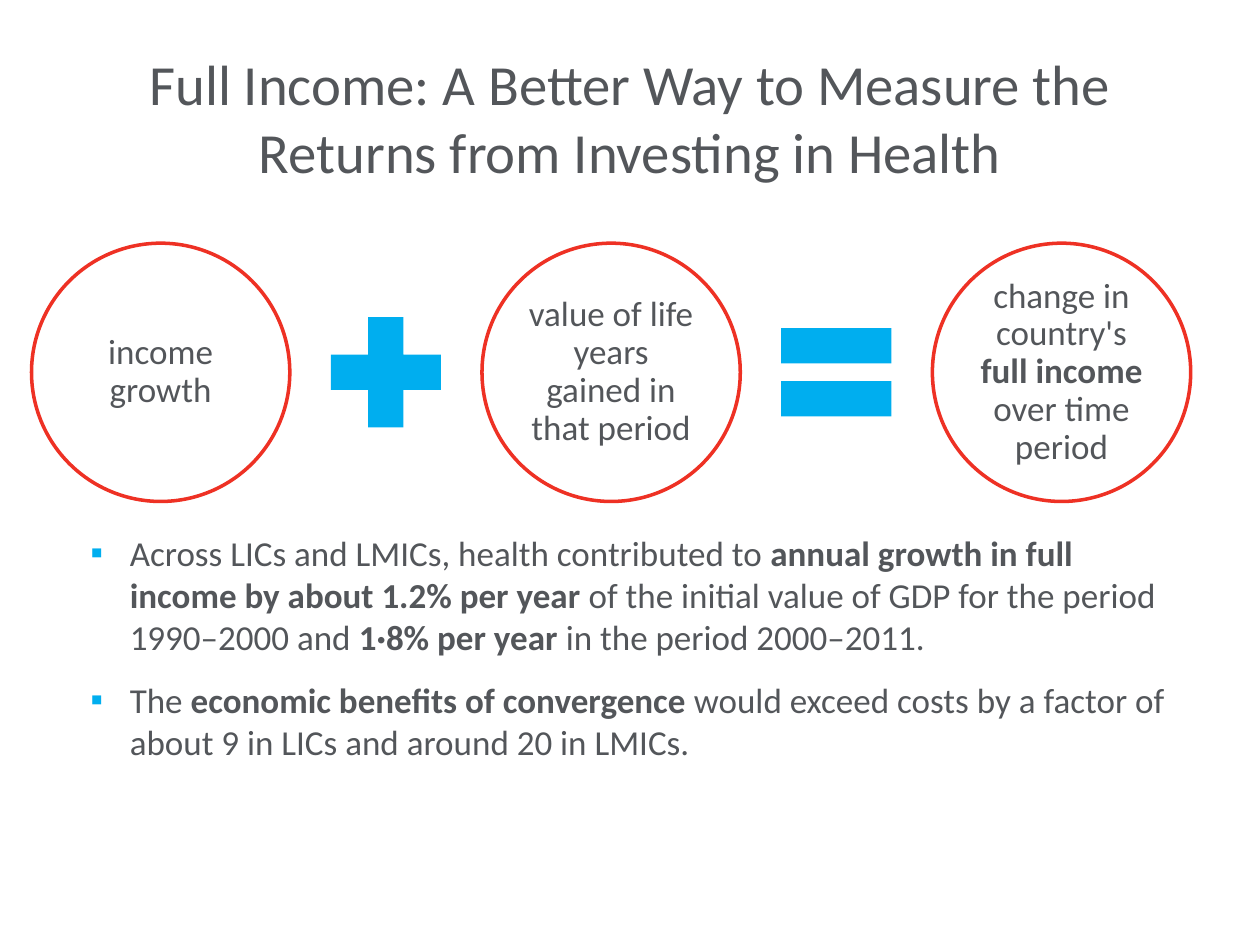
from dataclasses import dataclass

import pptx
import pptx.dml.color
import pptx.enum.shapes
import pptx.enum.text
import pptx.oxml
import pptx.oxml.ns
import pptx.util
from pptx.util import Inches

SHAPE = pptx.enum.shapes.MSO_SHAPE
ALIGN = pptx.enum.text.PP_ALIGN
ANCHOR = pptx.enum.text.MSO_ANCHOR
AUTO = pptx.enum.text.MSO_AUTO_SIZE


@dataclass(frozen=True)
class Theme:
    """Colours, font and type sizes of the slide."""
    font: str = "Calibri"
    text: str = "53565A"
    accent: str = "00AEEF"
    ring: str = "EE3124"
    paper: str = "FFFFFF"
    title_size: float = 32.4
    body_size: float = 20


THEME = Theme()
TITLE = "Full Income: A Better Way to Measure the Returns from Investing in Health"
EQUATION = [
    (SHAPE.OVAL, [("income growth", False)]),
    (SHAPE.MATH_PLUS, None),
    (SHAPE.OVAL, [("value of life years gained in that period", False)]),
    (SHAPE.MATH_EQUAL, None),
    (SHAPE.OVAL, [("change in country's ", False), ("full income ", True),
                  ("over time period", False)]),
]
FINDINGS = [
    [("Across LICs and LMICs, health contributed to ", False),
     ("annual growth in full income by about 1.2% per year ", True),
     ("of the initial value of GDP for the period 1990–2000 and ", False),
     ("1·8% per year ", True),
     ("in the period 2000–2011.", False)],
    [("The", False), (" economic benefits of convergence ", True),
     ("would exceed costs by a factor of about 9 in LICs and around 20 in LMICs.", False)],
]


def rgb(value):
    """Return a colour from its hex value."""
    return pptx.dml.color.RGBColor.from_string(value)


def write(p, runs, size=THEME.body_size, align=ALIGN.LEFT, spacing=1.0, after=0):
    """Fill a paragraph with (text, bold) runs in the given format."""
    p.alignment = align
    p.line_spacing = spacing
    p.space_before = pptx.util.Pt(0)
    p.space_after = pptx.util.Pt(after)
    for text, bold in runs:
        r = p.add_run()
        r.text = text
        r.font.name = THEME.font
        r.font.size = pptx.util.Pt(size)
        r.font.bold = bold
        r.font.color.rgb = rgb(THEME.text)


def add_bullet(p, indent):
    """Give a paragraph a square bullet with a hanging indent."""
    pPr = p._p.get_or_add_pPr()
    pPr.set("marL", str(indent))
    pPr.set("indent", str(-indent))
    ns = pptx.oxml.ns.nsdecls("a")
    for xml in (f'<a:buClr {ns}><a:srgbClr val="{THEME.accent}"/></a:buClr>',
                f'<a:buFont {ns} typeface="{THEME.font}"/>',
                f'<a:buChar {ns} char="▪"/>'):
        pPr.append(pptx.oxml.parse_xml(xml))


def place(sp, x, y, w, h):
    """Move a placeholder to a box in inches."""
    sp.left, sp.top, sp.width, sp.height = map(Inches, (x, y, w, h))


def add_title(s, x, y, w, h):
    """Set the slide title in its box."""
    sp = s.shapes.title
    place(sp, x, y, w, h)
    tf = sp.text_frame
    tf.auto_size = AUTO.NONE
    tf.vertical_anchor = ANCHOR.MIDDLE
    write(tf.paragraphs[0], [(TITLE, False)], size=THEME.title_size, align=ALIGN.CENTER)


def add_equation(s, x, y, w, h):
    """Lay circles and operators along a row with equal gaps."""
    sign = 0.58 * h
    widths = [h if runs else sign for _, runs in EQUATION]
    gap = (w - sum(widths)) / (len(EQUATION) - 1)
    for (kind, runs), side in zip(EQUATION, widths):
        sp = s.shapes.add_shape(kind, Inches(x), Inches(y + (h - side) / 2),
                                Inches(side), Inches(side))
        sp.shadow.inherit = False
        sp.fill.solid()
        sp.fill.fore_color.rgb = rgb(THEME.paper if runs else THEME.accent)
        if runs:
            sp.line.color.rgb = rgb(THEME.ring)
            sp.line.width = pptx.util.Pt(2)
            tf = sp.text_frame
            tf.word_wrap = True
            tf.vertical_anchor = ANCHOR.MIDDLE
            tf.margin_left = tf.margin_right = Inches(0.03)
            tf.margin_top = tf.margin_bottom = Inches(0.03)
            write(tf.paragraphs[0], runs, align=ALIGN.CENTER, spacing=0.9)
        else:
            sp.line.fill.background()
        x += side + gap


def add_findings(s, x, y, w, h):
    """Set the bulleted findings in the body placeholder."""
    sp = s.placeholders[1]
    place(sp, x, y, w, h)
    tf = sp.text_frame
    tf.auto_size = AUTO.SHAPE_TO_FIT_TEXT
    for i, runs in enumerate(FINDINGS):
        p = tf.add_paragraph() if i else tf.paragraphs[0]
        add_bullet(p, Inches(0.31))
        write(p, runs, after=12)


def main():
    """Build and save the slide."""
    prs = pptx.Presentation()
    prs.slide_width, prs.slide_height = Inches(10), Inches(7.5)
    s = prs.slides.add_slide(prs.slide_layouts[1])
    add_title(s, 0.5, 0.3, 9, 1.25)
    add_equation(s, 0.25, 1.93, 9.2, 2.05)
    add_findings(s, 0.62, 4.17, 8.75, 1.95)
    prs.save("out.pptx")


if __name__ == "__main__":
    main()
